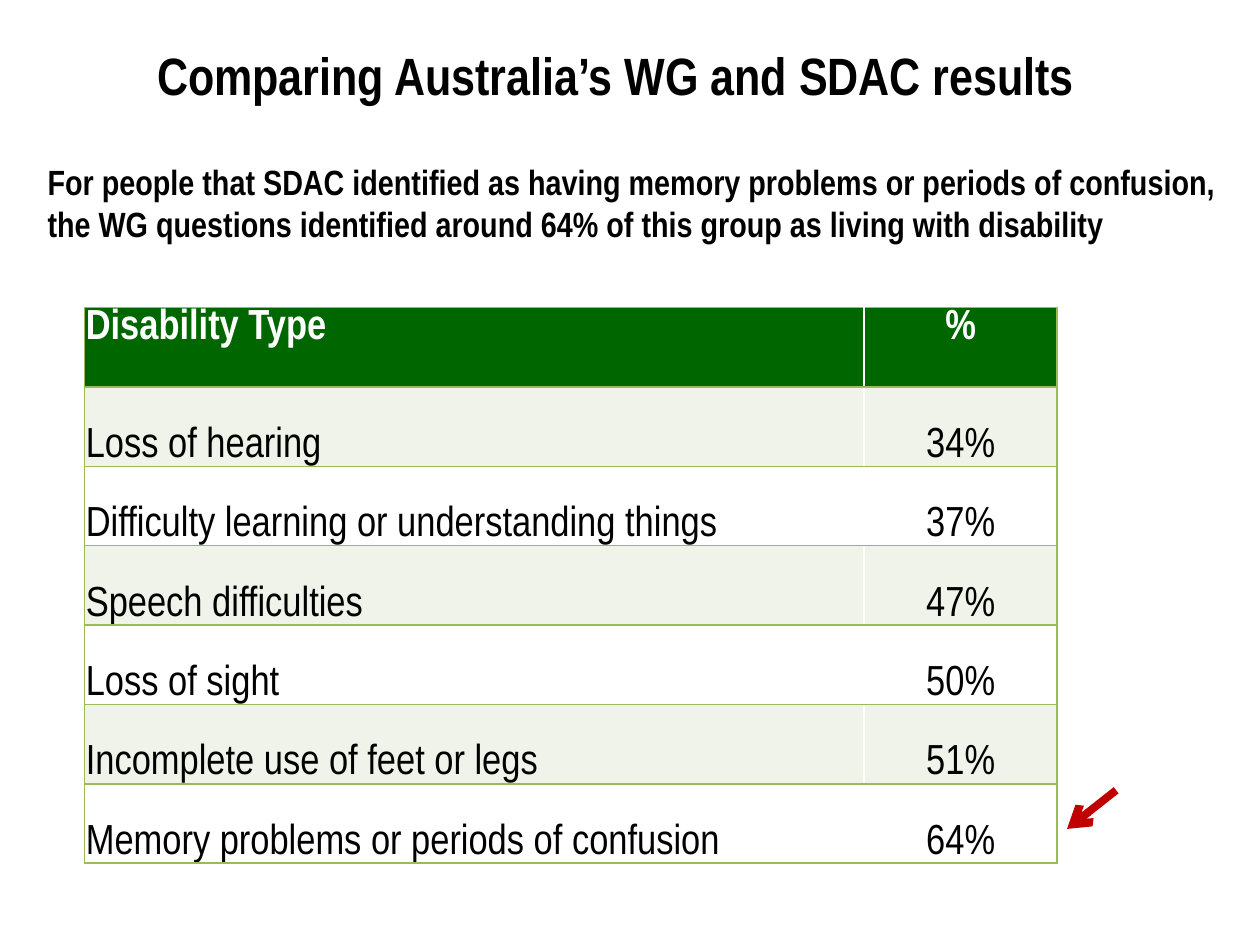
from lxml import etree
from pptx import Presentation
from pptx.dml.color import RGBColor
from pptx.enum import shapes, text
from pptx.oxml import ns
from pptx.util import Cm, Pt

TITLE = "Comparing Australia’s WG and SDAC results"
FINDING = (
    "For people that SDAC identified as having memory problems or periods of confusion, \v"
    "the WG questions identified around 64% of this group as living with disability"
)
ROWS = [
    ("Disability Type", "%"),
    ("Loss of hearing", "34%"),
    ("Difficulty learning or understanding things", "37%"),
    ("Speech difficulties", "47%"),
    ("Loss of sight", "50%"),
    ("Incomplete use of feet or legs", "51%"),
    ("Memory problems or periods of confusion", "64%"),
]
COLORS = {
    "ink": "000000", "white": "FFFFFF", "header": "006600",
    "band": "EFF3EA", "border": "9BBB59", "arrow": "C00000",
}
FONT = "Arial Narrow"
COLUMN_WIDTHS = (15.72, 3.89)
ROW_HEIGHT = 1.6


def rgb(name):
    return RGBColor.from_string(COLORS[name])


def write(paragraph, words, size, color="ink", bold=True):
    paragraph.text = words
    font = paragraph.font
    font.name, font.size, font.bold = FONT, Pt(size), bold
    font.color.rgb = rgb(color)


def add_heading(page, words, size, place, wrap):
    box = page.shapes.add_textbox(*map(Cm, place))
    box.text_frame.word_wrap = wrap
    write(box.text_frame.paragraphs[0], words, size)


def add_border(cell, side, color):
    properties = cell._tc.get_or_add_tcPr()
    line = etree.SubElement(properties, ns.qn(f"a:ln{side}"), w=str(Pt(1)))
    fill = etree.SubElement(line, ns.qn("a:solidFill"))
    etree.SubElement(fill, ns.qn("a:srgbClr"), val=COLORS[color])


def style_cell(cell, words, row, column):
    header = row == 0
    cell.margin_left = cell.margin_right = cell.margin_top = Cm(0.03)
    cell.margin_bottom = 0
    cell.vertical_anchor = text.MSO_ANCHOR.TOP if header else text.MSO_ANCHOR.BOTTOM
    paragraph = cell.text_frame.paragraphs[0]
    write(paragraph, words, 24, "white" if header else "ink", header)
    paragraph.alignment = text.PP_ALIGN.CENTER if column else text.PP_ALIGN.LEFT
    inner_side = "L" if column else "R"
    for side in "LRTB":  # the schema needs borders in this order, before the fill
        add_border(cell, side, "white" if side == inner_side else "border")
    cell.fill.solid()
    cell.fill.fore_color.rgb = rgb("header" if header else "band" if row % 2 else "white")


def add_results(page):
    frame = page.shapes.add_table(
        len(ROWS), len(COLUMN_WIDTHS), Cm(1.7), Cm(6.2),
        Cm(sum(COLUMN_WIDTHS)), Cm(ROW_HEIGHT * len(ROWS)))
    table = frame.table
    for column, width in zip(table.columns, COLUMN_WIDTHS):
        column.width = Cm(width)
    for r, values in enumerate(ROWS):
        table.rows[r].height = Cm(ROW_HEIGHT)
        for c, words in enumerate(values):
            style_cell(table.cell(r, c), words, r, c)


def add_arrow(page, *ends):
    arrow = page.shapes.add_connector(shapes.MSO_CONNECTOR.STRAIGHT, *map(Cm, ends))
    arrow.line.color.rgb = rgb("arrow")
    arrow.line.width = Pt(4.5)
    etree.SubElement(arrow.line._get_or_add_ln(), ns.qn("a:tailEnd"), type="arrow")
    etree.SubElement(arrow._element.spPr, ns.qn("a:effectLst"))


def main():
    deck = Presentation()
    deck.slide_width, deck.slide_height = Cm(25.4), Cm(19.05)
    page = deck.slides.add_slide(deck.slide_layouts[6])
    add_arrow(page, 22.5, 15.93, 21.51, 16.71)
    add_heading(page, TITLE, 30, (2.92, 0.74, 20.6, 1.55), True)
    add_heading(page, FINDING, 20, (0.71, 3.12, 24.36, 1.96), False)
    add_results(page)
    deck.save("out.pptx")


if __name__ == "__main__":
    main()
